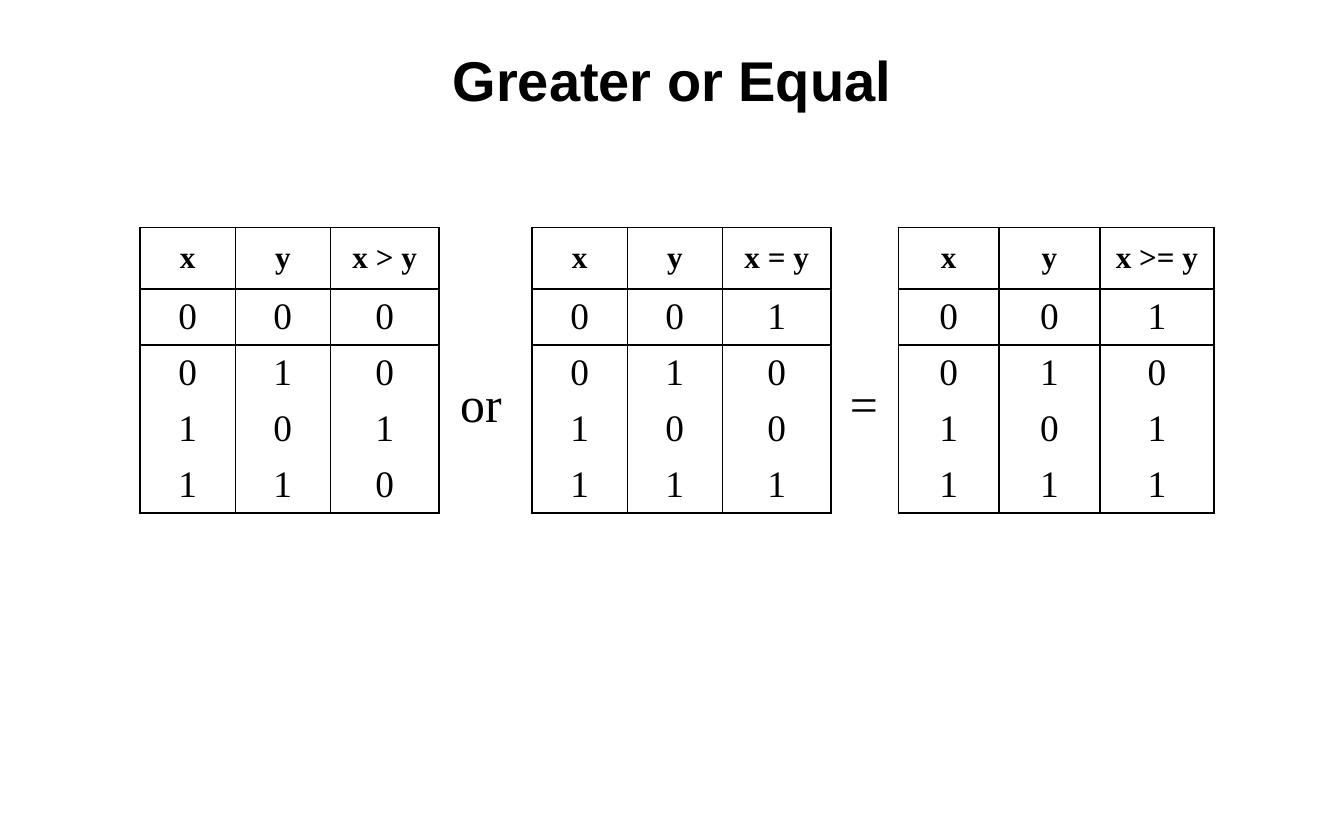
import itertools

import pptx
import pptx.dml.color
import pptx.enum.text
import pptx.oxml
import pptx.oxml.ns
import pptx.util

PX = 9144  # EMU per px, 100 px to the inch
BLACK = pptx.dml.color.RGBColor(0x00, 0x00, 0x00)
CENTER = pptx.enum.text.PP_ALIGN.CENTER
MIDDLE = pptx.enum.text.MSO_ANCHOR.MIDDLE
NO_STYLE = "{2D5ABB26-0587-4C30-8999-92F81FD0307C}"

TITLE = {"name": "Arial", "size": pptx.util.Pt(36), "bold": True}
HEADER = {"name": "Times New Roman", "size": pptx.util.Pt(20), "bold": True}
DIGIT = {"name": "Times New Roman", "size": pptx.util.Pt(24), "bold": False}
OPERATOR = {"name": "Times New Roman", "size": pptx.util.Pt(32), "bold": False}


def write(text_frame, text, font_format, alignment, space_before=0):
    paragraph = text_frame.paragraphs[0]
    paragraph.alignment = alignment
    paragraph.space_before = pptx.util.Pt(space_before)
    run = paragraph.add_run()
    run.text = text
    for attribute, value in font_format.items():
        setattr(run.font, attribute, value)
    run.font.color.rgb = BLACK


def add_border(cell, side):
    cell_properties = cell._tc.get_or_add_tcPr()
    cell_properties.append(pptx.oxml.parse_xml(
        f'<a:ln{side} {pptx.oxml.ns.nsdecls("a")} w="12700"><a:solidFill>'
        f'<a:srgbClr val="{BLACK}"/></a:solidFill></a:ln{side}>'))


presentation = pptx.Presentation()
presentation.slide_width = 1200 * PX
presentation.slide_height = 750 * PX
slide = presentation.slides.add_slide(presentation.slide_layouts[5])

# Title
title = slide.shapes.title
title.left, title.top, title.width, title.height = 0, 33 * PX, 1200 * PX, 75 * PX
title.text_frame.vertical_anchor = MIDDLE
write(title.text_frame, "Greater or Equal", TITLE, CENTER)

# Truth tables: left edge, column widths, result heading, result for x and y
truth_tables = [
    (125, (85, 85, 97), "x > y", lambda x, y: x > y),
    (475, (85, 85, 97), "x = y", lambda x, y: x == y),
    (802, (90, 90, 102), "x >= y", lambda x, y: x >= y),
]
row_heights = (55, 50, 50, 50, 50)
for left, column_widths, heading, compare in truth_tables:
    rows = [("x", "y", heading)]
    rows += [(x, y, int(compare(x, y))) for x, y in itertools.product((0, 1), repeat=2)]
    frame = slide.shapes.add_table(
        len(rows), 3, left * PX, 203 * PX, sum(column_widths) * PX, sum(row_heights) * PX)
    table = frame.table
    table.first_row = table.horz_banding = False
    table._tbl.tblPr.find(pptx.oxml.ns.qn("a:tableStyleId")).text = NO_STYLE
    for column, width in zip(table.columns, column_widths):
        column.width = width * PX
    for row_index, values in enumerate(rows):
        table.rows[row_index].height = row_heights[row_index] * PX
        # Vertical rules everywhere, horizontal ones around the header and at the end
        sides = "LR" + ("T" if row_index < 2 else "") + ("B" if row_index in (0, 4) else "")
        for column_index, value in enumerate(values):
            cell = table.cell(row_index, column_index)
            cell.vertical_anchor = MIDDLE
            if row_index == 0:
                write(cell.text_frame, value, HEADER, CENTER, 6)
            else:
                write(cell.text_frame, str(value), DIGIT, CENTER, 12)
            for side in sides:
                add_border(cell, side)
            cell.fill.background()

# Operators between the tables
for text, left, width in (("or", 401, 58), ("=", 749, 45)):
    label = slide.shapes.add_textbox(left * PX, 328 * PX, width * PX, 64 * PX)
    label.text_frame.word_wrap = False
    label.text_frame.auto_size = pptx.enum.text.MSO_AUTO_SIZE.SHAPE_TO_FIT_TEXT
    write(label.text_frame, text, OPERATOR, pptx.enum.text.PP_ALIGN.LEFT)

presentation.save("out.pptx")
